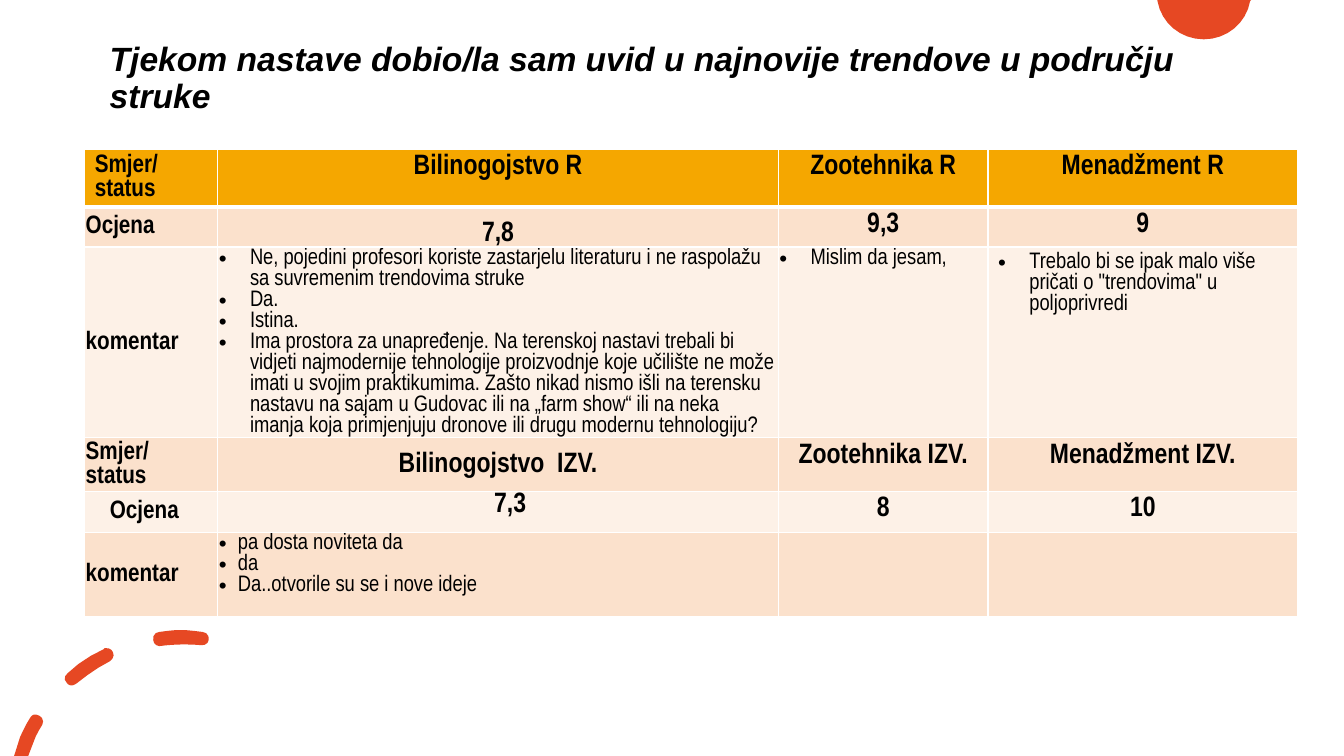
from lxml import etree
from pptx import Presentation
from pptx.dml.color import RGBColor
from pptx.enum.text import MSO_ANCHOR, PP_ALIGN
from pptx.oxml.ns import qn
from pptx.util import Inches, Pt

TOP, MIDDLE, BOTTOM = MSO_ANCHOR.TOP, MSO_ANCHOR.MIDDLE, MSO_ANCHOR.BOTTOM
LEFT, CENTER = PP_ALIGN.LEFT, PP_ALIGN.CENTER

ACCENT, WHITE, BLACK = "E64823", "FFFFFF", "000000"
GOLD, PEACH, CREAM = "F5A700", "FBE1CC", "FDF1E7"

DEFAULT = (0.1, 0.05, 0.1, 0.05)
TIGHT = (0.01, 0.01, 0.01, 0)
INSET = (0.25, 0.01, 0.01, 0)

COLUMNS = [1.32, 5.56, 2.08, 3.07]
LINE_PITCH = 0.94  # line height in the table, as a share of the text size

# Cell looks
LABEL = dict(size=18, bold=True, anchor=MIDDLE, margins=TIGHT)
HEADING = dict(size=20, bold=True, align=CENTER)
LOW_HEADING = dict(HEADING, anchor=BOTTOM, margins=TIGHT)
COMMENT = dict(size=16, bullet=0.31)
TIGHT_COMMENT = dict(COMMENT, margins=TIGHT)

# Each row: height, fill, cells of (lines, look)
ROWS = [
    (0.57, GOLD, [
        (["Smjer/", "status"], dict(size=18, bold=True)),
        (["Bilinogojstvo R"], HEADING),
        (["Zootehnika R"], HEADING),
        (["Menadžment R"], HEADING)]),
    (0.4, PEACH, [
        (["Ocjena"], LABEL),
        (["7,8"], LOW_HEADING),
        (["9,3"], HEADING),
        (["9"], HEADING)]),
    (1.88, CREAM, [
        (["komentar"], LABEL),
        (["Ne, pojedini profesori koriste zastarjelu literaturu i ne raspolažu "
          "sa suvremenim trendovima struke",
          "Da.",
          "Istina.",
          "Ima prostora za unapređenje. Na terenskoj nastavi trebali bi vidjeti "
          "najmodernije tehnologije proizvodnje koje učilište ne može imati u "
          "svojim praktikumima. Zašto nikad nismo išli na terensku nastavu na "
          "sajam u Gudovac ili na „farm show“ ili na neka imanja koja "
          "primjenjuju dronove ili drugu modernu tehnologiju?"], TIGHT_COMMENT),
        (["Mislim da jesam,"], TIGHT_COMMENT),
        (['Trebalo bi se ipak malo više pričati o "trendovima" u '
          'poljoprivredi'], COMMENT)]),
    (0.53, PEACH, [
        (["Smjer/", "status"], LABEL),
        (["Bilinogojstvo  IZV."], dict(LOW_HEADING, anchor=MIDDLE)),
        (["Zootehnika IZV."], HEADING),
        (["Menadžment IZV."], HEADING)]),
    (0.41, CREAM, [
        (["Ocjena"], dict(LABEL, margins=INSET)),
        (["7,3"], dict(HEADING, margins=INSET)),
        (["8"], HEADING),
        (["10"], HEADING)]),
    (0.84, PEACH, [
        (["komentar"], LABEL),
        (["pa dosta noviteta da", "da", "Da..otvorile su se i nove ideje"],
         dict(TIGHT_COMMENT, bullet=0.19)),
        ([], COMMENT),
        ([], COMMENT)]),
]

# Outlines relative to their box: start point, then lines (2 numbers) or curves (6)
DISC = [[(0, 0), (0.93, 0), (0.92, 0.01),
         (0.88, 0.23, 0.69, 0.39, 0.46, 0.39),
         (0.23, 0.39, 0.04, 0.23, 0, 0.01)]]
DASHES = [
    [(0.22, 0.84), (0.2, 0.83, 0.17, 0.85, 0.16, 0.87),
     (0.12, 0.93, 0.09, 1, 0.06, 1.06), (0, 1.25), (0.14, 1.25), (0.19, 1.12),
     (0.21, 1.06, 0.24, 1, 0.28, 0.94), (0.3, 0.91, 0.28, 0.86, 0.25, 0.85)],
    [(0.91, 0.18), (0.9, 0.18, 0.89, 0.18, 0.89, 0.19),
     (0.76, 0.25, 0.63, 0.33, 0.53, 0.43), (0.5, 0.45, 0.49, 0.5, 0.52, 0.52),
     (0.53, 0.54, 0.55, 0.55, 0.57, 0.55), (0.59, 0.55, 0.6, 0.54, 0.62, 0.53),
     (0.72, 0.45, 0.83, 0.37, 0.95, 0.31), (0.98, 0.29, 1, 0.25, 0.98, 0.22),
     (0.97, 0.19, 0.94, 0.18, 0.91, 0.18)],
    [(1.65, 0), (1.58, 0, 1.51, 0.01, 1.44, 0.02),
     (1.4, 0.02, 1.37, 0.06, 1.38, 0.1), (1.38, 0.13, 1.41, 0.16, 1.44, 0.16),
     (1.59, 0.14, 1.72, 0.14, 1.85, 0.15), (1.89, 0.16, 1.93, 0.13, 1.93, 0.1),
     (1.94, 0.06, 1.91, 0.02, 1.87, 0.02), (1.8, 0.01, 1.72, 0, 1.65, 0)],
]


def rgb(color):
    return RGBColor.from_string(color)


def write(tf, lines, size=18, font="Arial Narrow", bold=False, italic=False,
          align=LEFT, anchor=TOP, margins=DEFAULT, bullet=0, spacing=None):
    tf.word_wrap = True
    tf.vertical_anchor = anchor
    for i, line in enumerate(lines):
        p = tf.paragraphs[0] if i == 0 else tf.add_paragraph()
        p.alignment = align
        p.line_spacing = spacing or Pt(size * LINE_PITCH)
        if bullet:
            pPr = p._p.get_or_add_pPr()
            pPr.set("marL", str(Inches(bullet)))
            pPr.set("indent", str(-Inches(bullet)))
            etree.SubElement(pPr, qn("a:buFont"), typeface="Arial")
            etree.SubElement(pPr, qn("a:buChar"), char="•")
        r = p.add_run()
        r.text = line
        f = r.font
        f.name, f.size, f.bold, f.italic = font, Pt(size), bold, italic
        f.color.rgb = rgb(BLACK)


def fit(cell, anchor=TOP, margins=DEFAULT, **look):
    """Set the anchor and margins of a cell."""
    cell.vertical_anchor = anchor
    (cell.margin_left, cell.margin_top,
     cell.margin_right, cell.margin_bottom) = map(Inches, margins)


def add_borders(cell, top=1, bottom=1):
    tcPr = cell._tc.get_or_add_tcPr()
    widths = {"a:lnL": 1, "a:lnR": 1, "a:lnT": top, "a:lnB": bottom}
    for i, (tag, width) in enumerate(widths.items()):
        ln = etree.Element(qn(tag), w=str(Pt(width)))
        fill = etree.SubElement(ln, qn("a:solidFill"))
        etree.SubElement(fill, qn("a:srgbClr"), val=WHITE)
        tcPr.insert(i, ln)


def flatten(contour):
    """Turn lines and cubic curves into points, more of them on long curves."""
    points = [contour[0]]
    for part in contour[1:]:
        start = points[-1]
        if len(part) == 2:
            points.append(part)
            continue
        steps = 8 if abs(part[4] - start[0]) > 0.4 else 3
        for k in range(1, steps + 1):
            t = k / steps
            u = 1 - t
            points.append(tuple(
                u**3 * start[i] + 3 * u * u * t * part[i]
                + 3 * u * t * t * part[i + 2] + t**3 * part[i + 4]
                for i in (0, 1)))
    return points


def add_ornament(s, x, y, contours):
    outlines = [[(Inches(x + px), Inches(y + py)) for px, py in flatten(c)]
                for c in contours]
    builder = s.shapes.build_freeform(*outlines[0][0])
    for i, points in enumerate(outlines):
        if i:
            builder.move_to(*points[0])
        builder.add_line_segments(points[1:], close=True)
    sp = builder.convert_to_shape()
    sp.shadow.inherit = False
    sp.fill.solid()
    sp.fill.fore_color.rgb = rgb(ACCENT)
    sp.line.fill.background()


def add_title(s, x, y, w, h, text):
    tf = s.shapes.add_textbox(*map(Inches, (x, y, w, h))).text_frame
    write(tf, [text], size=24, font="Arial", bold=True, italic=True,
          anchor=MIDDLE, spacing=0.9)


def add_ratings(s, x, y):
    size = (sum(COLUMNS), sum(height for height, _, _ in ROWS))
    table = s.shapes.add_table(len(ROWS), len(COLUMNS),
                               *map(Inches, (x, y, *size))).table
    for column, width in zip(table.columns, COLUMNS):
        column.width = Inches(width)
    for i, (height, fill, cells) in enumerate(ROWS):
        table.rows[i].height = Inches(height)
        for j, (lines, look) in enumerate(cells):
            cell = table.cell(i, j)
            write(cell.text_frame, lines, **look)
            fit(cell, **look)
            cell.fill.solid()
            cell.fill.fore_color.rgb = rgb(fill)
            # Thick rule under the header
            add_borders(cell, top=3 if i == 1 else 1, bottom=3 if i == 0 else 1)


def main():
    prs = Presentation()
    prs.slide_width, prs.slide_height = Inches(13.33), Inches(7.5)
    s = prs.slides.add_slide(prs.slide_layouts[6])
    add_ornament(s, 11.48, 0, DISC)
    add_ornament(s, 0.14, 6.25, DASHES)
    add_title(s, 0.99, 0.22, 11.5, 1.13,
              "Tjekom nastave dobio/la sam uvid u najnovije trendove u području struke")
    add_ratings(s, 0.84, 1.48)
    prs.save("out.pptx")


if __name__ == "__main__":
    main()
